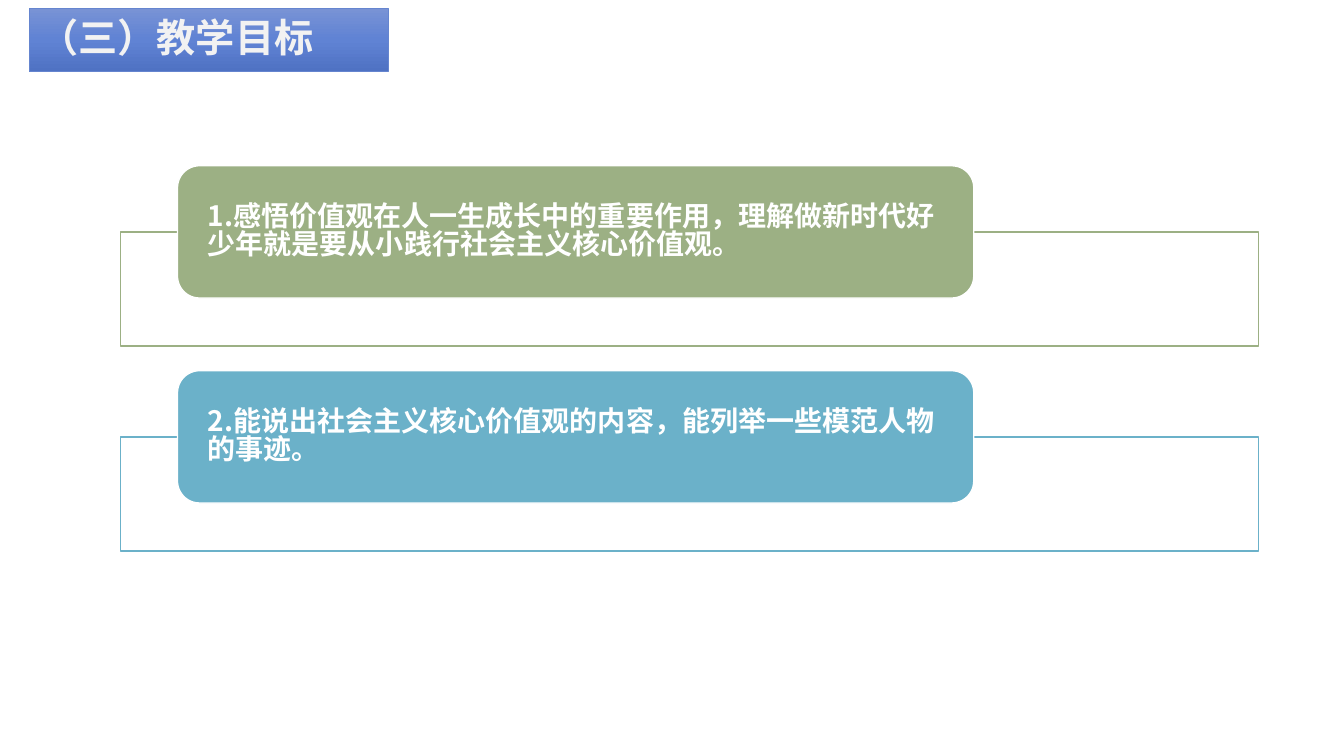
from copy import deepcopy

from lxml.etree import SubElement
from pptx import Presentation
from pptx.dml.color import RGBColor
from pptx.enum.shapes import MSO_SHAPE
from pptx.enum.text import MSO_ANCHOR, MSO_AUTO_SIZE, PP_ALIGN
from pptx.oxml import parse_xml
from pptx.oxml.ns import nsdecls, qn
from pptx.util import Pt

FONT = "Noto Sans CJK SC"
COLORS = {
    "white": "FFFFFF",
    "title text": "F2F2F2",
    "title line": "6585CF",
    "title top": "7993D5",
    "title middle": "6083D4",
    "title bottom": "4F72C3",
    "green": "9CB084",
    "blue": "6BB1C9",
}
GOALS = [
    ("green", "1.感悟价值观在人一生成长中的重要作用，理解做新时代好少年就是要从小践行社会主义核心价值观。"),
    ("blue", "2.能说出社会主义核心价值观的内容，能列举一些模范人物的事迹。"),
]
FIRST_TOP = 118.4
GOAL_STEP = 146.4


def color(name):
    return RGBColor.from_string(COLORS[name])


def add_bold_text(shape, text, size, color_name):
    """Write one left-aligned bold run, with the font set for Chinese too."""
    paragraph = shape.text_frame.paragraphs[0]
    paragraph.alignment = PP_ALIGN.LEFT
    run = paragraph.add_run()
    run.text = text
    run.font.size = Pt(size)
    run.font.bold = True
    run.font.name = FONT
    run.font.color.rgb = color(color_name)
    SubElement(run.font._element, qn("a:ea"), typeface=FONT)
    return paragraph


presentation = Presentation()
presentation.slide_width = Pt(960)
presentation.slide_height = Pt(540)
slide = presentation.slides.add_slide(presentation.slide_layouts[5])

# Title banner
title = slide.shapes.title
title.left, title.top, title.width, title.height = Pt(20.9), Pt(5.6), Pt(256.3), Pt(45.5)
title._element.spPr.find(qn("a:xfrm")).addnext(
    parse_xml(f'<a:prstGeom {nsdecls("a")} prst="roundRect"><a:avLst/></a:prstGeom>'))
title.fill.gradient()
title.fill.gradient_angle = 270
stop_list = title._element.spPr.find(qn("a:gradFill")).find(qn("a:gsLst"))
stop_list.insert(1, deepcopy(stop_list[0]))
for index, stop in enumerate(title.fill.gradient_stops):
    stop.position = index / 2
    stop.color.rgb = color(["title top", "title middle", "title bottom"][index])
title.line.color.rgb = color("title line")
title.line.width = Pt(0.5)
title.text_frame.auto_size = MSO_AUTO_SIZE.NONE
title.text_frame.vertical_anchor = MSO_ANCHOR.TOP
add_bold_text(title, "（三）教学目标", 28, "title text")

# Each goal: an outlined frame with a filled label over its top edge
for index, (color_name, text) in enumerate(GOALS):
    top = FIRST_TOP + index * GOAL_STEP
    frame = slide.shapes.add_shape(
        MSO_SHAPE.RECTANGLE, Pt(86.2), Pt(top + 47.2), Pt(812.8), Pt(81.5))
    label = slide.shapes.add_shape(
        MSO_SHAPE.ROUNDED_RECTANGLE, Pt(126.8), Pt(top), Pt(568.8), Pt(94.5))
    for shape, fill_name, line_name in (
            (frame, "white", color_name), (label, color_name, "white")):
        shape.shadow.inherit = False
        shape.fill.solid()
        shape.fill.fore_color.rgb = color(fill_name)
        shape.line.color.rgb = color(line_name)
        shape.line.width = Pt(1)
    frame_color = frame._element.spPr.find(qn("a:solidFill"))[0]
    SubElement(frame_color, qn("a:alpha"), val="90000")

    text_frame = label.text_frame
    text_frame.word_wrap = True
    text_frame.vertical_anchor = MSO_ANCHOR.MIDDLE
    # The rounded corners already inset the text by about 4.6 points
    text_frame.margin_left = text_frame.margin_right = Pt(17)
    text_frame.margin_top = text_frame.margin_bottom = 0
    paragraph = add_bold_text(label, text, 20, color_name="white")
    paragraph.line_spacing = 0.84

presentation.save("out.pptx")
